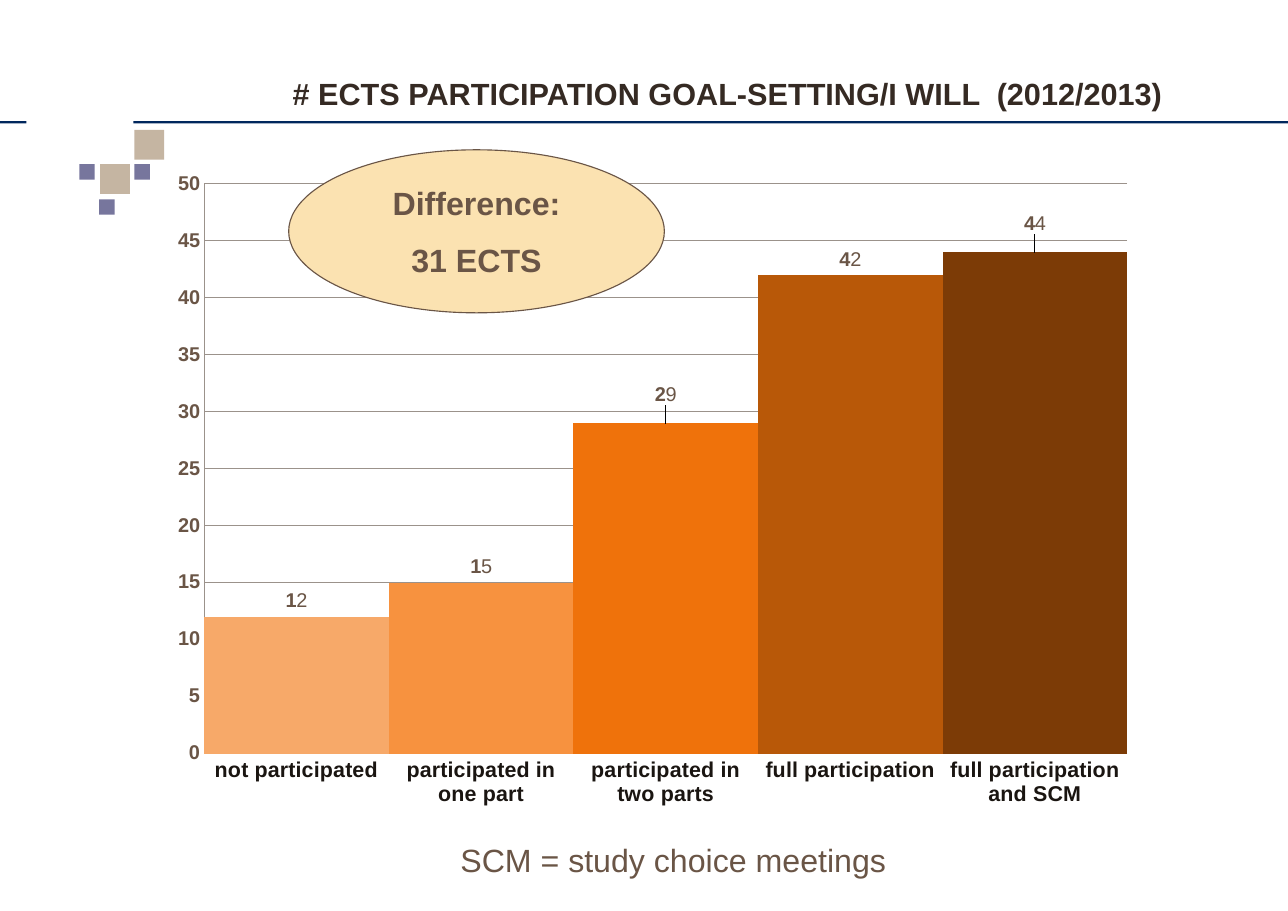
"""Builds a slide with a column chart of ECTS by participation in goal-setting."""
import pptx
import pptx.chart.data
import pptx.dml.color
import pptx.enum.chart
import pptx.enum.shapes
import pptx.enum.text
import pptx.oxml
import pptx.oxml.ns
import pptx.util
from pptx.util import Inches, Pt

TITLE = "# ECTS PARTICIPATION GOAL-SETTING/I WILL  (2012/2013)"
CALLOUT = ["Difference:", "31 ECTS"]
FOOTNOTE = "SCM = study choice meetings"
COLUMNS = [
    ("not participated", 12, "F7A969", 0),
    ("participated in one part", 15, "F7923F", 0),
    ("participated in two parts", 29, "EF720B", -0.02),
    ("full participation", 42, "B85808", 0),
    ("full participation and SCM", 44, "7C3B06", -0.02),
]
PLOT_AREA = {"x": 0.046, "y": 0.035, "w": 0.933, "h": 0.865}
RULES = [(0, 0.24), (1.21, 10.48)]
SQUARES = [
    (0.72, 1.49, "small"),
    (1.22, 1.18, "large"),
    (0.91, 1.49, "large"),
    (0.9, 1.81, "small"),
    (1.22, 1.49, "small"),
]
THEME = {
    "font": "Arial",
    "title": "352A23", "text": "6A5546", "category": "1A1511",
    "rule": "00275D", "callout": "FBE2B1", "grid": "9B928B",
    "square": {"small": (0.14, "77769D"), "large": (0.27, "C5B5A2")},
    "title_size": 20, "body_size": 21, "category_size": 14, "value_size": 13,
}
SHAPE = pptx.enum.shapes.MSO_SHAPE
ALIGN = pptx.enum.text.PP_ALIGN
ANCHOR = pptx.enum.text.MSO_ANCHOR


def rgb(value):
    return pptx.dml.color.RGBColor.from_string(value)


def style(font, size, color, bold=False):
    font.name = THEME["font"]
    font.size = Pt(size)
    font.bold = bold
    font.color.rgb = rgb(color)


def add_filled(s, kind, box, color):
    sp = s.shapes.add_shape(kind, *map(Inches, box))
    sp.shadow.inherit = False
    sp.fill.solid()
    sp.fill.fore_color.rgb = rgb(color)
    sp.line.fill.background()
    return sp


def write(sp, lines, size, color, bold, align, anchor, inset):
    tf = sp.text_frame
    tf.word_wrap = True
    tf.vertical_anchor = anchor
    tf.margin_left = tf.margin_right = Inches(inset[0])
    tf.margin_top = tf.margin_bottom = Inches(inset[1])
    tf.text = "\n".join(lines)
    for i, p in enumerate(tf.paragraphs):
        p.alignment = align
        if i:
            p.space_before = Pt(12)
        for r in p.runs:
            style(r.font, size, color, bold)


def manual_layout(fractions, inner=False):
    target = '<c:layoutTarget val="inner"/>' if inner else ""
    modes = "".join(f'<c:{k}Mode val="edge"/>' for k in "xy") if inner else ""
    values = "".join(f'<c:{k} val="{v}"/>' for k, v in fractions.items())
    return pptx.oxml.parse_xml(
        f'<c:layout {pptx.oxml.ns.nsdecls("c")}><c:manualLayout>'
        f"{target}{modes}{values}</c:manualLayout></c:layout>")


def add_column_chart(s):
    data = pptx.chart.data.CategoryChartData()
    data.categories = [name for name, *_ in COLUMNS]
    data.add_series("Series 1", [value for _, value, *_ in COLUMNS])
    box = map(Inches, (1.44, 1.46, 8.98, 5.98))
    chart = s.shapes.add_chart(
        pptx.enum.chart.XL_CHART_TYPE.COLUMN_CLUSTERED, *box, data).chart
    chart.has_legend = chart.has_title = False
    style(chart.font, 10, THEME["text"])

    none = pptx.enum.chart.XL_TICK_MARK.NONE
    axes = [(chart.category_axis, "category_size", "category"),
            (chart.value_axis, "value_size", "text")]
    for axis, size, color in axes:
        axis.major_tick_mark = axis.minor_tick_mark = none
        style(axis.tick_labels.font, THEME[size], THEME[color], True)
        axis.format.line.color.rgb = rgb(THEME["grid"])
        axis.format.line.width = Pt(0.75)
    value_axis = chart.value_axis
    value_axis.minimum_scale, value_axis.maximum_scale = 0, 50
    value_axis.major_unit = 5
    grid = value_axis.major_gridlines.format.line
    grid.color.rgb = rgb(THEME["grid"])
    grid.width = Pt(0.75)

    plot = chart.plots[0]
    plot.gap_width = 0
    plot.vary_by_categories = False
    series = plot.series[0]
    for i, (_, value, color, lift) in enumerate(COLUMNS):
        point = series.points[i]
        point.format.fill.solid()
        point.format.fill.fore_color.rgb = rgb(color)
        label = point.data_label
        p = label.text_frame.paragraphs[0]
        for j, digit in enumerate(str(value)):
            r = p.add_run()
            r.text = digit
            style(r.font, THEME["value_size"], THEME["text"], j == 0)
        label.position = pptx.enum.chart.XL_LABEL_POSITION.OUTSIDE_END
        if lift:
            idx = series._element.xpath(f'c:dLbls/c:dLbl/c:idx[@val="{i}"]')[0]
            idx.addnext(manual_layout({"x": 0, "y": lift}))

    area = chart._chartSpace.xpath("c:chart/c:plotArea")[0]
    for old in area.xpath("c:layout"):
        area.remove(old)
    area.insert(0, manual_layout(PLOT_AREA, inner=True))


def main():
    prs = pptx.Presentation()
    prs.slide_width, prs.slide_height = Inches(11.69), Inches(8.27)
    s = prs.slides.add_slide(prs.slide_layouts[6])

    for left, width in RULES:
        add_filled(s, SHAPE.RECTANGLE, (left, 1.1, width, 0.02), THEME["rule"])
    for left, top, kind in SQUARES:
        side, color = THEME["square"][kind]
        add_filled(s, SHAPE.RECTANGLE, (left, top, side, side), color)

    title = s.shapes.add_textbox(*map(Inches, (2.05, 0.31, 9.11, 0.7)))
    write(title, [TITLE], THEME["title_size"], THEME["title"], True,
          ALIGN.CENTER, ANCHOR.BOTTOM, (0, 0))

    add_column_chart(s)

    note = s.shapes.add_textbox(*map(Inches, (4.08, 7.58, 4.49, 0.45)))
    write(note, [FOOTNOTE], THEME["body_size"], THEME["text"], False,
          ALIGN.LEFT, ANCHOR.MIDDLE, (0.1, 0.05))

    callout = add_filled(s, SHAPE.OVAL, (2.62, 1.36, 3.41, 1.48), THEME["callout"])
    callout.line.color.rgb = rgb(THEME["text"])
    callout.line.width = Pt(0.75)
    write(callout, CALLOUT, THEME["body_size"], THEME["text"], True,
          ALIGN.CENTER, ANCHOR.MIDDLE, (0.11, 0.06))

    prs.save("out.pptx")


if __name__ == "__main__":
    main()
